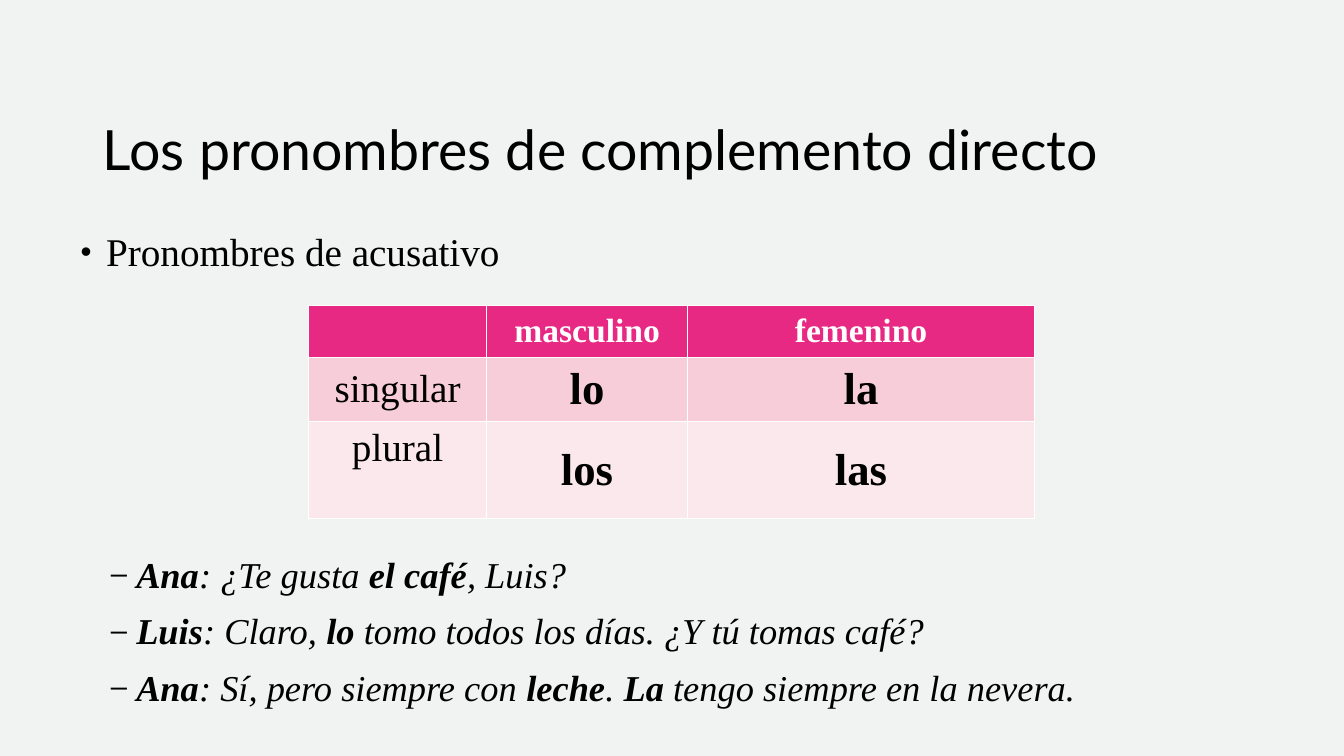
from lxml import etree
from pptx import Presentation
from pptx.dml.color import RGBColor
from pptx.enum.text import MSO_ANCHOR, MSO_AUTO_SIZE, PP_ALIGN
from pptx.oxml.ns import qn
from pptx.util import Cm, Pt

LEFT, CENTER = PP_ALIGN.LEFT, PP_ALIGN.CENTER
TOP, MIDDLE, BOTTOM = MSO_ANCHOR.TOP, MSO_ANCHOR.MIDDLE, MSO_ANCHOR.BOTTOM
NO_FIT = MSO_AUTO_SIZE.NONE
SERIF = "Times New Roman"
COLORS = {
    "background": "F0F3F2",
    "text": "000000",
    "header": "E72983",
    "header_text": "FFFFFF",
    "singular": "F6CDD9",
    "plural": "FAE8ED",
}


def add_run(p, text, size, font=SERIF, color="text", bold=False, italic=False):
    r = p.add_run()
    r.text = text
    r.font.name = font
    r.font.size = Pt(size)
    r.font.bold = bold
    r.font.italic = italic
    r.font.color.rgb = RGBColor.from_string(COLORS[color])


def set_bullet(p, char, margin):
    pPr = p._p.get_or_add_pPr()
    pPr.set("marL", str(margin))
    pPr.set("indent", str(-Cm(0.64)))
    etree.SubElement(pPr, qn("a:buSzPct")).set("val", "80000")
    etree.SubElement(pPr, qn("a:buFont")).set("typeface", "Arial")
    etree.SubElement(pPr, qn("a:buChar")).set("char", char)


prs = Presentation()
prs.slide_width, prs.slide_height = Cm(33.87), Cm(19.05)
s = prs.slides.add_slide(prs.slide_layouts[1])
s.background.fill.solid()
s.background.fill.fore_color.rgb = RGBColor.from_string(COLORS["background"])

title = s.shapes.title
title.left, title.top, title.width, title.height = Cm(2.34), Cm(1.63), Cm(29.2), Cm(3.1)
tf = title.text_frame
tf.auto_size = NO_FIT
tf.vertical_anchor = BOTTOM
p = tf.paragraphs[0]
p.alignment = LEFT
p.line_spacing = 0.9
add_run(p, "Los pronombres de complemento directo", 39.6, font="Lato")

body = s.placeholders[1]
body.left, body.top, body.width, body.height = Cm(1.78), Cm(5.49), Cm(30.33), Cm(12.55)
tf = body.text_frame
tf.auto_size = NO_FIT
tf.vertical_anchor = TOP
p = tf.paragraphs[0]
p.line_spacing = 1.1
p.space_before = Pt(10)
add_run(p, "Pronombres de acusativo", 28)
set_bullet(p, "•", Cm(0.64))

dialogue = [
    ["Ana", ": ¿Te gusta ", "el café", ", Luis?"],
    ["Luis", ": Claro, ", "lo", " tomo todos los días. ¿Y tú tomas café?"],
    ["Ana", ": Sí, pero siempre con ", "leche", ". ", "La", " tengo siempre en la nevera."],
]
for i, parts in enumerate(dialogue):
    p = tf.add_paragraph()
    p.level = 1
    p.line_spacing = 1.1
    p.space_before = Pt(6 if i else 195)
    for j, part in enumerate(parts):
        add_run(p, part, 26, bold=j % 2 == 0, italic=True)
    set_bullet(p, "–", Cm(1.4))

col_widths = [4.5, 5.05, 8.76]
row_heights = [1.3, 1.63, 2.44]
rows = [
    ("header", ["", "masculino", "femenino"]),
    ("singular", ["singular", "lo", "la"]),
    ("plural", ["plural", "los", "las"]),
]
table = s.shapes.add_table(3, 3, Cm(7.77), Cm(7.7),
                           Cm(sum(col_widths)), Cm(sum(row_heights))).table
for column, width in zip(table.columns, col_widths):
    column.width = Cm(width)
for i, (kind, texts) in enumerate(rows):
    table.rows[i].height = Cm(row_heights[i])
    for j, text in enumerate(texts):
        cell = table.cell(i, j)
        cell.fill.solid()
        cell.fill.fore_color.rgb = RGBColor.from_string(COLORS[kind])
        cell.vertical_anchor = TOP if text == "plural" else MIDDLE
        p = cell.text_frame.paragraphs[0]
        p.alignment = CENTER
        if not text:
            continue
        if kind == "header":
            add_run(p, text, 24, color="header_text", bold=True)
        else:
            add_run(p, text, 32 if j else 28, bold=j > 0)

prs.save("out.pptx")
